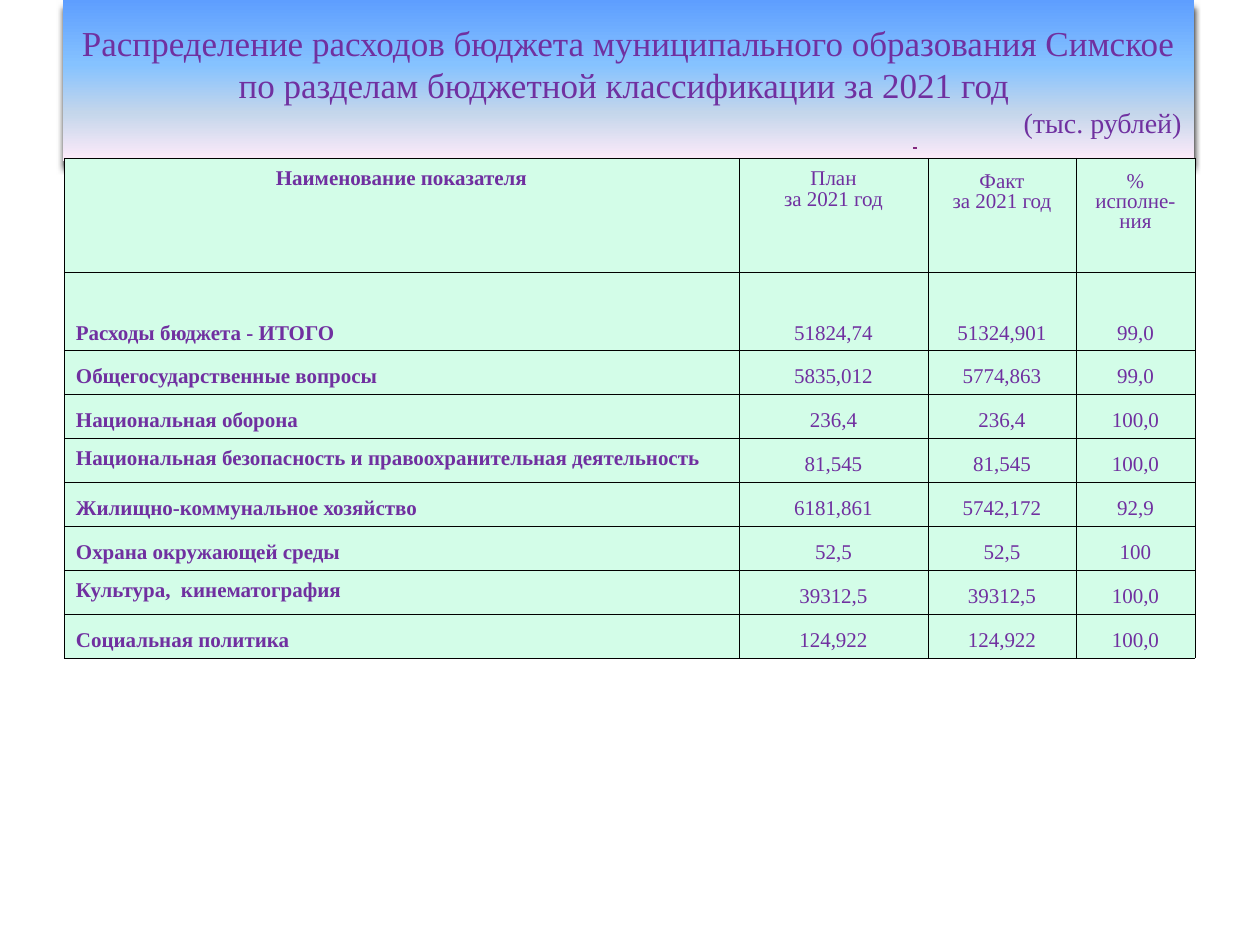
from pptx import Presentation
from pptx import util as u
from pptx.dml.color import RGBColor
from pptx.enum import shapes, text
from pptx.oxml.ns import qn
from lxml import etree

PX = 914400 / 126  # EMU in one px


class Theme:
    font = "Times New Roman"
    ink = "7030A0"
    cell = "D3FDE8"
    border = "000000"
    mark = "83297F"
    band = [(0, "5E9EFF"), (40, "85C2FF"), (70, "C4D6EB"), (100, "FFEBFA")]
    title, unit, body = 20, 16, 12


TITLE = ("Распределение расходов бюджета муниципального образования Симское "
         "по разделам бюджетной классификации за 2021 год ")
UNIT = "(тыс. рублей)"
HEADER = ["Наименование показателя", "План\nза 2021 год", "Факт\nза 2021 год",
          "% исполне-ния"]
EXPENSES = [
    ["Расходы бюджета - ИТОГО", "51824,74", "51324,901", "99,0"],
    ["Общегосударственные вопросы", "5835,012", "5774,863", "99,0"],
    ["Национальная оборона", "236,4", "236,4", "100,0"],
    ["Национальная безопасность и правоохранительная деятельность",
     "81,545", "81,545", "100,0"],
    ["Жилищно-коммунальное хозяйство", "6181,861", "5742,172", "92,9"],
    ["Охрана окружающей среды", "52,5", "52,5", "100"],
    ["Культура,  кинематография", "39312,5", "39312,5", "100,0"],
    ["Социальная политика", "124,922", "124,922", "100,0"],
]
TOP_NAMES = {4, 7}  # rows whose name stands at the top of its cell
COLS = [675, 189, 148, 119]
ROWS = [114, 78] + [44] * 7

ALIGN, ANCHOR = text.PP_ALIGN, text.MSO_ANCHOR


def px(n):
    return u.Emu(round(n * PX))


def rgb(code):
    return RGBColor.from_string(code)


def put(obj, **values):
    for name, value in values.items():
        setattr(obj, name, value)


def add_xml(parent, tag, **attrs):
    return etree.SubElement(parent, qn(tag), {k: str(v) for k, v in attrs.items()})


def write(p, words, size, align, bold=False):
    p.alignment = align
    r = p.add_run()
    r.text = words
    put(r.font, name=Theme.font, size=u.Pt(size), bold=bold)
    r.font.color.rgb = rgb(Theme.ink)


def fill_band(sp):
    """Four-stop gradient running from top to bottom."""
    sp.fill.gradient()
    sp.fill.gradient_angle = 270
    stops = sp._element.spPr.find(".//" + qn("a:gsLst"))
    for old in list(stops):
        stops.remove(old)
    for pos, code in Theme.band:
        stop = add_xml(stops, "a:gs", pos=pos * 1000)
        add_xml(stop, "a:srgbClr", val=code)


def drop_shadow(sp):
    sp.shadow.inherit = False
    effects = sp._element.spPr.find(qn("a:effectLst"))
    shadow = add_xml(effects, "a:outerShdw", blurRad=u.Pt(4), dist=u.Pt(4),
                     dir=90 * 60000, rotWithShape=0)
    add_xml(shadow, "a:srgbClr", val="000000")


def add_title(s):
    sp = s.shapes.add_shape(shapes.MSO_SHAPE.RECTANGLE,
                            px(63), px(0), px(1131), px(161))
    fill_band(sp)
    sp.line.fill.background()
    drop_shadow(sp)
    tf = sp.text_frame
    put(tf, word_wrap=True, vertical_anchor=ANCHOR.MIDDLE)
    write(tf.paragraphs[0], TITLE, Theme.title, ALIGN.CENTER)
    write(tf.add_paragraph(), UNIT, Theme.unit, ALIGN.RIGHT)


def add_borders(cell):
    tc_pr = cell._tc.get_or_add_tcPr()
    for side in "LRTB":
        ln = add_xml(tc_pr, f"a:ln{side}", w=u.Pt(0.11))
        add_xml(add_xml(ln, "a:solidFill"), "a:srgbClr", val=Theme.border)


def fill_cell(cell, words, row, col):
    add_borders(cell)
    cell.fill.solid()
    cell.fill.fore_color.rgb = rgb(Theme.cell)
    at_top = row == 0 or (col == 0 and row in TOP_NAMES)
    put(cell, margin_left=px(12), margin_right=px(12), margin_bottom=px(6),
        margin_top=px(14 if row == 0 and col > 1 else 12),
        vertical_anchor=ANCHOR.TOP if at_top else ANCHOR.BOTTOM)
    align = ALIGN.LEFT if row and not col else ALIGN.CENTER
    tf = cell.text_frame
    for i, line in enumerate(words.split("\n")):
        p = tf.add_paragraph() if i else tf.paragraphs[0]
        p.line_spacing = 0.86
        write(p, line, Theme.body, align, bold=col == 0)


def add_expenses(s):
    table = s.shapes.add_table(len(ROWS), len(COLS), px(64), px(158),
                               px(sum(COLS)), px(sum(ROWS))).table
    put(table, first_row=False, horz_banding=False)
    for column, width in zip(table.columns, COLS):
        column.width = px(width)
    for row, height in zip(table.rows, ROWS):
        row.height = px(height)
    for i, record in enumerate([HEADER] + EXPENSES):
        for j, words in enumerate(record):
            fill_cell(table.cell(i, j), words, i, j)


def add_mark(s, x, y1, y2):
    line = s.shapes.add_connector(shapes.MSO_CONNECTOR.STRAIGHT,
                                  px(x), px(y1), px(x), px(y2))
    line.line.width = u.Pt(2)
    line.line.color.rgb = rgb(Theme.mark)
    add_xml(line._element.spPr, "a:effectLst")


def main():
    prs = Presentation()
    put(prs, slide_width=px(1260), slide_height=px(945))
    s = prs.slides.add_slide(prs.slide_layouts[6])
    add_title(s)
    add_expenses(s)
    add_mark(s, 915, 147, 149)
    prs.save("out.pptx")


if __name__ == "__main__":
    main()
